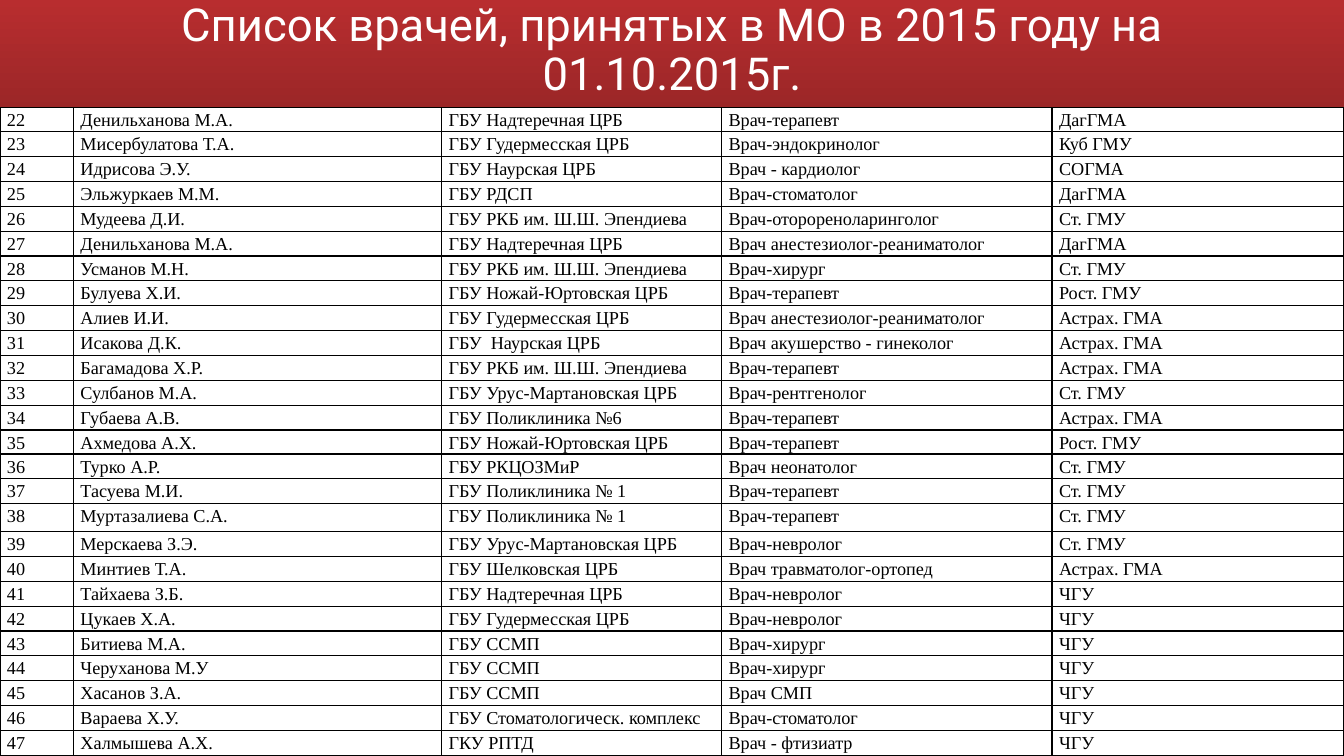
"""Build a slide listing the doctors hired in 2015."""
from lxml.etree import SubElement
from pptx import Presentation
from pptx.dml.color import RGBColor
from pptx.enum.shapes import MSO_SHAPE as Preset
from pptx.enum.text import MSO_ANCHOR as Anchor, MSO_AUTO_SIZE as AutoSize, PP_ALIGN as Align
from pptx.oxml.ns import qn
from pptx.util import Pt

TITLE = "Список врачей, принятых в МО в 2015 году на 01.10.2015г."
FIRST_NUMBER = 22
DOCTORS = [
    ("Денильханова М.А.", "ГБУ Надтеречная ЦРБ", "Врач-терапевт", "ДагГМА"),
    ("Мисербулатова Т.А.", "ГБУ Гудермесская ЦРБ", "Врач-эндокринолог", "Куб ГМУ"),
    ("Идрисова Э.У.", "ГБУ Наурская ЦРБ", "Врач - кардиолог", "СОГМА"),
    ("Эльжуркаев М.М.", "ГБУ РДСП", "Врач-стоматолог", "ДагГМА"),
    ("Мудеева Д.И.", "ГБУ РКБ им. Ш.Ш. Эпендиева", "Врач-оторореноларинголог", "Ст. ГМУ"),
    ("Денильханова М.А.", "ГБУ Надтеречная ЦРБ", "Врач анестезиолог-реаниматолог", "ДагГМА"),
    ("Усманов М.Н.", "ГБУ РКБ им. Ш.Ш. Эпендиева", "Врач-хирург", "Ст. ГМУ"),
    ("Булуева Х.И.", "ГБУ Ножай-Юртовская ЦРБ", "Врач-терапевт", "Рост. ГМУ"),
    ("Алиев И.И.", "ГБУ Гудермесская ЦРБ", "Врач анестезиолог-реаниматолог", "Астрах. ГМА"),
    ("Исакова Д.К.", "ГБУ  Наурская ЦРБ", "Врач акушерство - гинеколог", "Астрах. ГМА"),
    ("Багамадова Х.Р.", "ГБУ РКБ им. Ш.Ш. Эпендиева", "Врач-терапевт", "Астрах. ГМА"),
    ("Сулбанов М.А.", "ГБУ Урус-Мартановская ЦРБ", "Врач-рентгенолог", "Ст. ГМУ"),
    ("Губаева А.В.", "ГБУ Поликлиника №6", "Врач-терапевт", "Астрах. ГМА"),
    ("Ахмедова А.Х.", "ГБУ Ножай-Юртовская ЦРБ", "Врач-терапевт", "Рост. ГМУ"),
    ("Турко А.Р.", "ГБУ РКЦОЗМиР", "Врач неонатолог", "Ст. ГМУ"),
    ("Тасуева М.И.", "ГБУ Поликлиника № 1", "Врач-терапевт", "Ст. ГМУ"),
    ("Муртазалиева С.А.", "ГБУ Поликлиника № 1", "Врач-терапевт", "Ст. ГМУ"),
    ("Мерскаева З.Э.", "ГБУ Урус-Мартановская ЦРБ", "Врач-невролог", "Ст. ГМУ"),
    ("Минтиев Т.А.", "ГБУ Шелковская ЦРБ", "Врач травматолог-ортопед", "Астрах. ГМА"),
    ("Тайхаева З.Б.", "ГБУ Надтеречная ЦРБ", "Врач-невролог", "ЧГУ"),
    ("Цукаев Х.А.", "ГБУ Гудермесская ЦРБ", "Врач-невролог", "ЧГУ"),
    ("Битиева М.А.", "ГБУ ССМП", "Врач-хирург", "ЧГУ"),
    ("Черуханова М.У", "ГБУ ССМП", "Врач-хирург", "ЧГУ"),
    ("Хасанов З.А.", "ГБУ ССМП", "Врач СМП", "ЧГУ"),
    ("Вараева Х.У.", "ГБУ Стоматологическ. комплекс", "Врач-стоматолог", "ЧГУ"),
    ("Халмышева А.Х.", "ГКУ РПТД", "Врач - фтизиатр", "ЧГУ"),
]

WIDTH, HEIGHT = 960, 540
TABLE_TOP = 77
COLUMN_WIDTHS = (52.5, 263, 200, 236, 208.5)
ROW_HEIGHT = 17.75
SPECIAL_HEIGHTS = {22: 17.2, 35: 17.2, 38: 20}

WHITE = RGBColor(0xFF, 0xFF, 0xFF)
BLACK = RGBColor(0, 0, 0)
GREY = RGBColor(0xD9, 0xD9, 0xD9)
RED = RGBColor(0xB8, 0x2D, 0x2F)
DARK_RED = RGBColor(0x8A, 0x22, 0x23)


def fill_gradient(fill, colors, angle):
    fill.gradient()
    fill.gradient_angle = angle
    for stop, color in zip(fill.gradient_stops, colors):
        stop.color.rgb = color


def write(paragraph, text, font_name, size, color, spacing):
    paragraph.line_spacing = spacing
    run = paragraph.add_run()
    run.text = text
    run.font.name = font_name
    run.font.size = Pt(size)
    run.font.color.rgb = color


def add_borders(cell):
    properties = cell._tc.get_or_add_tcPr()
    for position, side in enumerate(("lnL", "lnR", "lnT", "lnB")):
        line = SubElement(properties, qn(f"a:{side}"), w=str(Pt(1)))
        solid = SubElement(line, qn("a:solidFill"))
        SubElement(solid, qn("a:srgbClr"), val=str(BLACK))
        properties.insert(position, line)


def add_header(slide):
    band = slide.shapes.add_shape(Preset.RECTANGLE, 0, 0, Pt(WIDTH), Pt(120))
    band.shadow.inherit = False
    band.line.fill.background()
    fill_gradient(band.fill, (RED, DARK_RED), 270)

    title = slide.shapes.title
    title.element.addprevious(band.element)
    title.left, title.top, title.width, title.height = Pt(84), Pt(8), Pt(792), Pt(58)
    frame = title.text_frame
    frame.auto_size = AutoSize.NONE
    frame.word_wrap = True
    frame.vertical_anchor = Anchor.MIDDLE
    paragraph = frame.paragraphs[0]
    paragraph.alignment = Align.CENTER
    write(paragraph, TITLE, "Roboto", 32.4, WHITE, 0.9)


def add_doctors(slide):
    table = slide.shapes.add_table(
        len(DOCTORS), len(COLUMN_WIDTHS), 0, Pt(TABLE_TOP), Pt(WIDTH), Pt(HEIGHT - TABLE_TOP)
    ).table
    table.first_row = table.horz_banding = False
    for column, width in zip(table.columns, COLUMN_WIDTHS):
        column.width = Pt(width)
    for number, (row, doctor) in enumerate(zip(table.rows, DOCTORS), FIRST_NUMBER):
        row.height = Pt(SPECIAL_HEIGHTS.get(number, ROW_HEIGHT))
        for cell, text in zip(row.cells, (str(number), *doctor)):
            cell.margin_left = cell.margin_right = Pt(5)
            cell.margin_top = cell.margin_bottom = 0
            cell.fill.solid()
            cell.fill.fore_color.rgb = WHITE
            add_borders(cell)
            write(cell.text_frame.paragraphs[0], text, "Times New Roman", 13, BLACK, 1.15)


def main():
    presentation = Presentation()
    presentation.slide_width, presentation.slide_height = Pt(WIDTH), Pt(HEIGHT)
    slide = presentation.slides.add_slide(presentation.slide_layouts[5])
    fill_gradient(slide.background.fill, (GREY, WHITE), 90)
    add_header(slide)
    add_doctors(slide)
    presentation.save("out.pptx")


if __name__ == "__main__":
    main()
